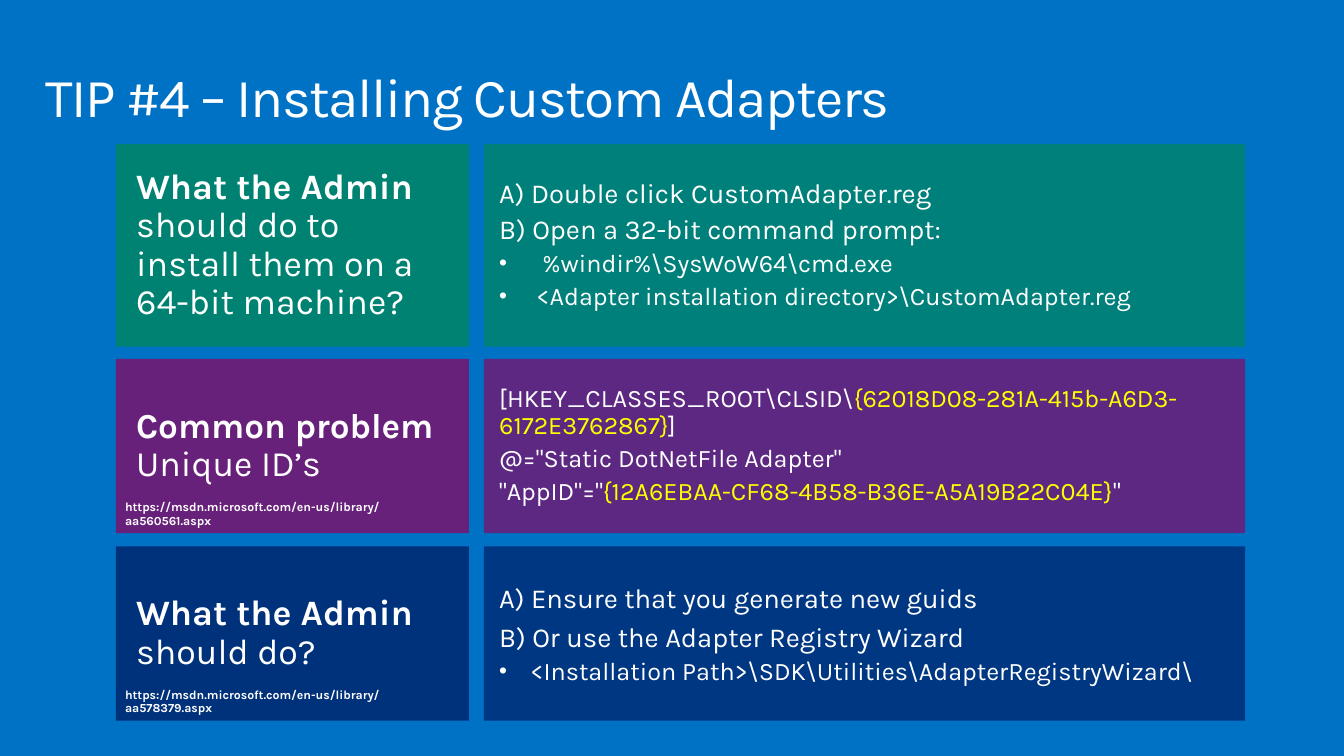
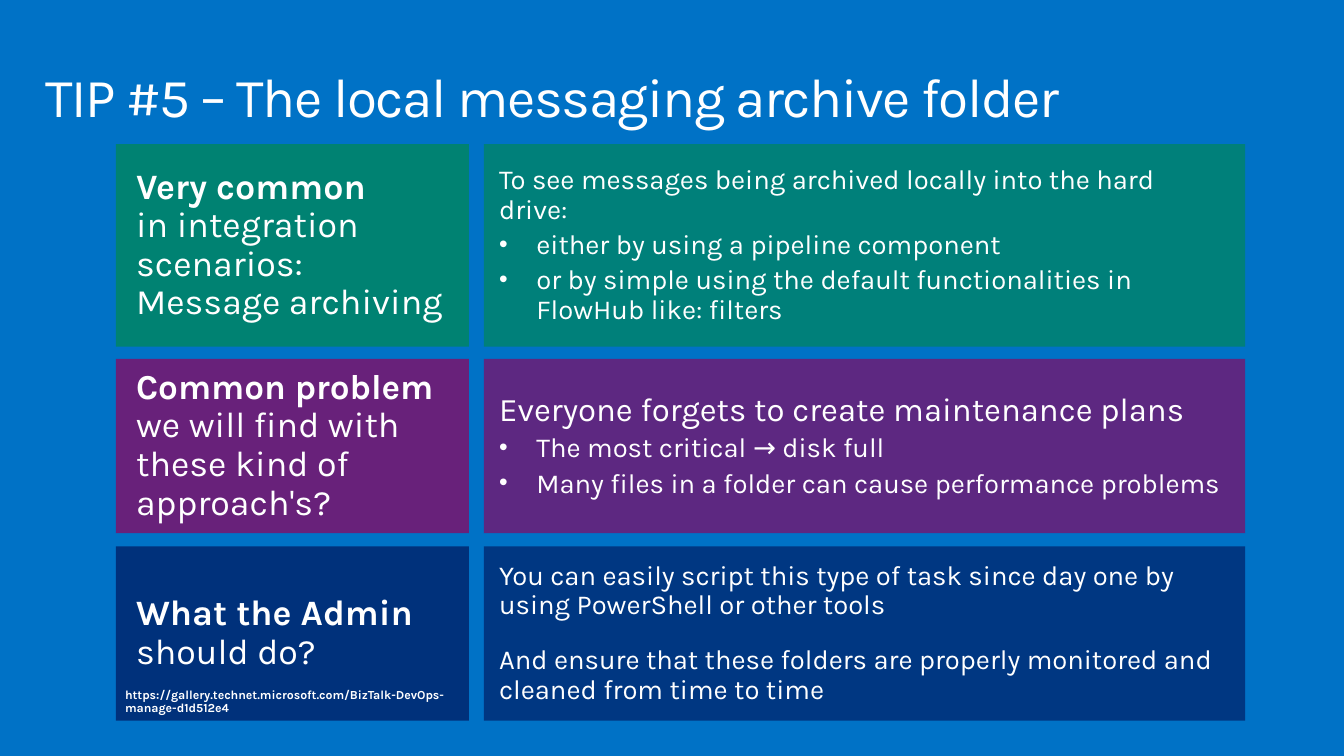
from dataclasses import dataclass

from lxml.etree import SubElement
from pptx import Presentation
from pptx.dml.color import RGBColor
from pptx.enum.shapes import MSO_SHAPE
from pptx.enum.text import MSO_ANCHOR, PP_ALIGN
from pptx.oxml.ns import qn
from pptx.util import Pt

SCALE = 9144  # 100 px to the inch


# Shared look
@dataclass(frozen=True)
class Theme:
    font: str = "Karla"
    back: str = "0072C6"
    white: str = "FFFFFF"
    mark: str = "FFFF00"
    title: float = 39.2
    head: float = 25.5
    large: float = 23.5
    body: float = 19.6
    small: float = 18
    link: float = 8.8
    lead: float = 0.9


THEME = Theme()


@dataclass(frozen=True)
class Row:
    color: str
    top: int
    height: int
    head: float = THEME.head


ROWS = [
    Row("008272", 143, 201),
    Row("68217A", 356, 173, 25),
    Row("00317B", 542, 173),
]
CELL_X, CELL_W = 115, 350
PANEL_X, PANEL_W = 480, 755
LINK_X, LINK_W, LINK_H = 104, 360, 58


@dataclass(frozen=True)
class Line:
    words: tuple  # every second item is marked
    size: float = THEME.body
    indent: int = 0  # hanging indent in px, with a bullet
    lead: float = THEME.lead
    gap: float = 4


def line(*words, **style):
    return Line(words, **style)


def point(text, size=THEME.body, indent=37):
    return line(text, size=size, indent=indent)


def px(*sizes):
    return [size * SCALE for size in sizes]


# Text
def paint(run, size, color=THEME.white, bold=False):
    font = run.font
    font.name, font.size, font.bold = THEME.font, Pt(size), bold
    font.color.rgb = RGBColor.from_string(color)


def pad(frame, left, top, right, low):
    frame.word_wrap = True
    sides = px(left, top, right, low)
    frame.margin_left, frame.margin_top, frame.margin_right, frame.margin_bottom = sides


def bullet(para, indent):
    props = para._p.get_or_add_pPr()
    props.set("marL", str(indent * SCALE))
    props.set("indent", str(-indent * SCALE))
    SubElement(props, qn("a:buSzPct"), val="90000")
    SubElement(props, qn("a:buFont"), typeface="Arial")
    SubElement(props, qn("a:buChar"), char="•")


def write(frame, lines):
    for i, item in enumerate(lines):
        para = frame.add_paragraph() if i else frame.paragraphs[0]
        if item.indent:
            bullet(para, item.indent)
        para.alignment = PP_ALIGN.LEFT
        para.line_spacing = item.lead
        if i:
            para.space_before = Pt(item.gap)
        for j, text in enumerate(item.words):
            run = para.add_run()
            run.text = text
            paint(run, item.size, THEME.mark if j % 2 else THEME.white)


# Slide elements
def add_title(slide, text):
    frame = slide.shapes.add_textbox(*px(29, 32, 1275, 98)).text_frame
    pad(frame, 16, 10, 16, 10)
    frame.text = text
    para = frame.paragraphs[0]
    para.line_spacing = Pt(61.8)
    run = para.runs[0]
    paint(run, THEME.title)
    run._r.get_or_add_rPr().set("spc", "-100")


def add_block(slide, color, *box):
    shape = slide.shapes.add_shape(MSO_SHAPE.RECTANGLE, *px(*box))
    shape.shadow.inherit = False
    shape.fill.solid()
    shape.fill.fore_color.rgb = RGBColor.from_string(color)
    shape.line.fill.background()
    shape.text_frame.vertical_anchor = MSO_ANCHOR.MIDDLE
    return shape


def add_cell(slide, row, head, rest):
    frame = add_block(slide, row.color, CELL_X, row.top, CELL_W, row.height).text_frame
    pad(frame, 20, 11, 20, 11)
    para = frame.paragraphs[0]
    para.text = f"{head}\v{rest}"
    para.alignment = PP_ALIGN.LEFT
    para.line_spacing = THEME.lead
    first, last = para.runs
    paint(first, row.head, bold=True)
    paint(last, THEME.head)


def add_panel(slide, row, lines):
    shape = add_block(slide, row.color, PANEL_X, row.top, PANEL_W, row.height)
    tint = shape.element.spPr.find(".//" + qn("a:srgbClr"))
    SubElement(tint, qn("a:alpha"), val="90000")
    pad(shape.text_frame, 15, 0, 20, 0)
    write(shape.text_frame, lines)


def add_link(slide, row, text):
    top = row.top + row.height - 45
    frame = slide.shapes.add_textbox(*px(LINK_X, top, LINK_W, LINK_H)).text_frame
    pad(frame, 20, 16, 20, 16)
    frame.text = text
    para = frame.paragraphs[0]
    para.line_spacing = THEME.lead
    paint(para.runs[0], THEME.link, bold=True)


def add_tip(deck, title, cells):
    slide = deck.slides.add_slide(deck.slide_layouts[6])
    fill = slide.background.fill
    fill.solid()
    fill.fore_color.rgb = RGBColor.from_string(THEME.back)
    add_title(slide, title)
    for row, (head, rest, link, lines) in zip(ROWS, cells):
        add_panel(slide, row, lines)
        add_cell(slide, row, head, rest)
        if link:
            add_link(slide, row, link)


# Content: head, rest, link and panel lines of each row
TIPS = {
    "TIP #4 – Installing Custom Adapters": [
        ("What the Admin", "should do to install them on a 64-bit machine?", None, [
            line("A) Double click CustomAdapter.reg"),
            line("B) Open a 32-bit command prompt:"),
            point(r"%windir%\SysWoW64\cmd.exe", THEME.small, 43),
            point(r"<Adapter installation directory>\CustomAdapter.reg", THEME.small),
        ]),
        ("Common problem", "Unique ID’s",
         "https://msdn.microsoft.com/en-us/library/aa560561.aspx", [
            line("[HKEY_CLASSES_ROOT\\CLSID\\", "{62018D08-281A-415b-A6D3-6172E3762867}", "]",
                 size=THEME.small),
            line('@="Static DotNetFile Adapter"', size=THEME.small),
            line('"AppID"="', "{12A6EBAA-CF68-4B58-B36E-A5A19B22C04E}", '"',
                 size=THEME.small),
         ]),
        ("What the Admin", "should do?",
         "https://msdn.microsoft.com/en-us/library/aa578379.aspx", [
            line("A) Ensure that you generate new guids", lead=1.0),
            line("B) Or use the Adapter Registry Wizard", lead=1.0),
            point("<Installation Path>\\SDK\\Utilities\\AdapterRegistryWizard\\",
                  THEME.small, 31),
         ]),
    ],
    "TIP #5 – The local messaging archive folder": [
        ("Very common", "in integration scenarios: Message archiving", None, [
            line("To see messages being archived locally into the hard drive:"),
            point("either by using a pipeline component"),
            point("or by simple using the default functionalities in FlowHub like: filters"),
        ]),
        ("Common problem", "we will find with these kind of approach's?", None, [
            line("Everyone forgets to create maintenance plans", size=THEME.large),
            point("The most critical → disk full"),
            point("Many files in a folder can cause performance problems"),
        ]),
        ("What the Admin", "should do?",
         "https://gallery.technet.microsoft.com/BizTalk-DevOps-manage-d1d512e4", [
            line("You can easily script this type of task since day one by using "
                 "PowerShell or other tools"),
            line("And ensure that these folders are properly monitored and cleaned "
                 "from time to time", gap=18),
         ]),
    ],
}


def main():
    deck = Presentation()
    deck.slide_width, deck.slide_height = px(1333, 750)
    for title, cells in TIPS.items():
        add_tip(deck, title, cells)
    deck.save("out.pptx")


if __name__ == "__main__":
    main()
